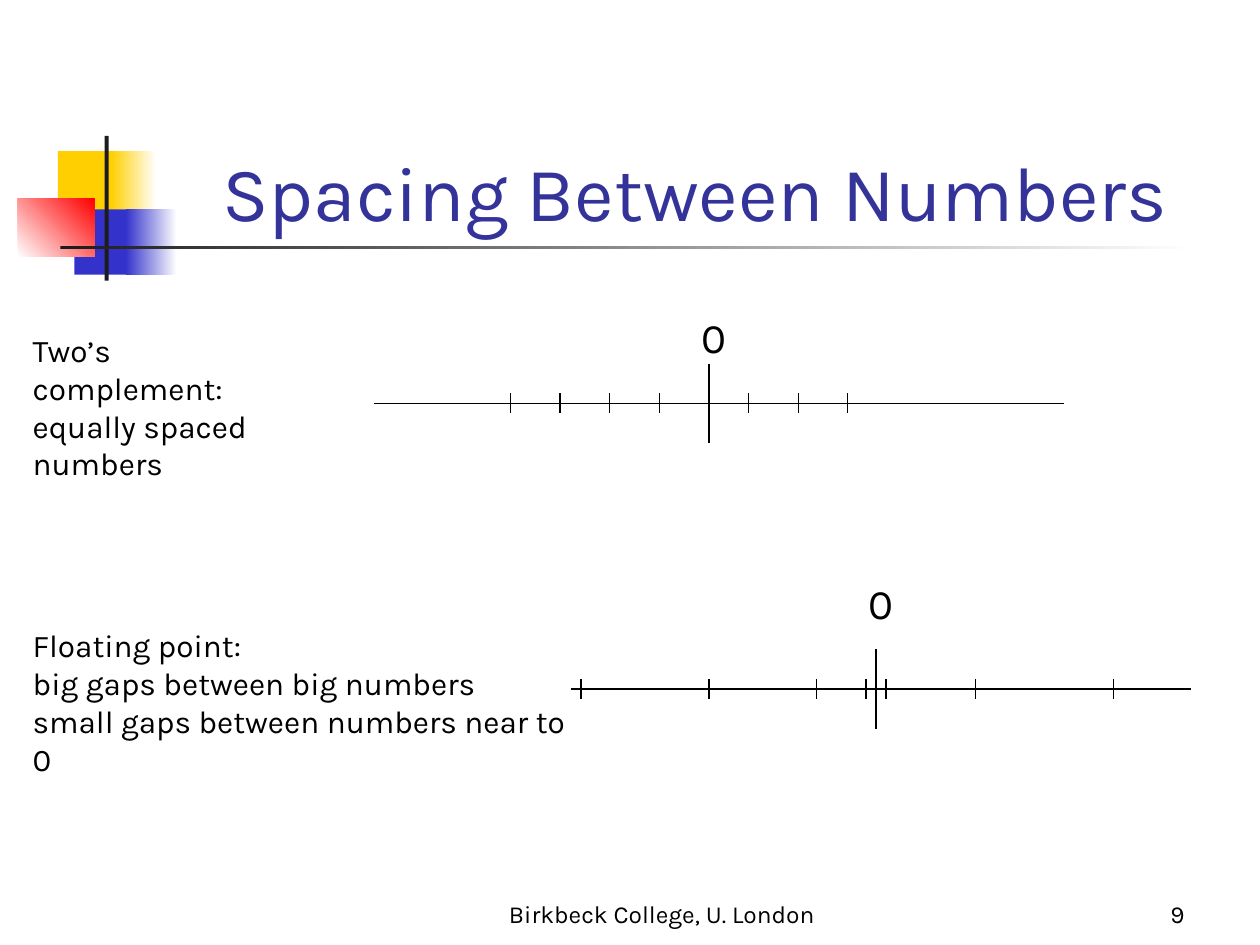
from lxml.etree import SubElement
from pptx import Presentation
from pptx.dml.color import RGBColor
from pptx.enum.shapes import MSO_CONNECTOR as Connector, MSO_SHAPE as Shape
from pptx.enum.text import MSO_ANCHOR as Anchor, PP_ALIGN as Align
from pptx.oxml.ns import qn
from pptx.util import Cm, Pt

BLACK = RGBColor(0x00, 0x00, 0x00)
WHITE = RGBColor(0xFF, 0xFF, 0xFF)
CHARCOAL = RGBColor(0x1C, 0x1C, 0x1C)
YELLOW = RGBColor(0xFF, 0xCF, 0x01)
BLUE = RGBColor(0x33, 0x33, 0xCC)
RED = RGBColor(0xFF, 0x00, 0x00)
NAVY = RGBColor(0x33, 0x33, 0x99)


class SlideBuilder:
    font = "Karla"
    line_width = Pt(0.75)

    def __init__(self, slide):
        self.slide = slide

    def block(self, left, top, width, height, color, fade_to=None, angle=0):
        shape = self.slide.shapes.add_shape(
            Shape.RECTANGLE, Cm(left), Cm(top), Cm(width), Cm(height))
        shape.shadow.inherit = False
        shape.line.fill.background()
        if fade_to is None:
            shape.fill.solid()
            shape.fill.fore_color.rgb = color
        else:
            shape.fill.gradient()
            shape.fill.gradient_angle = angle
            for stop, stop_color in zip(shape.fill.gradient_stops, (color, fade_to)):
                stop.color.rgb = stop_color

    def text(self, left, top, width, height, lines, size,
             color=BLACK, align=Align.LEFT, anchor=Anchor.TOP):
        box = self.slide.shapes.add_textbox(Cm(left), Cm(top), Cm(width), Cm(height))
        frame = box.text_frame
        frame.word_wrap = True
        frame.vertical_anchor = anchor
        for index, line in enumerate(lines):
            paragraph = frame.add_paragraph() if index else frame.paragraphs[0]
            paragraph.alignment = align
            run = paragraph.add_run()
            run.text = line
            run.font.name = self.font
            run.font.size = Pt(size)
            run.font.color.rgb = color

    def line(self, x1, y1, x2, y2):
        connector = self.slide.shapes.add_connector(
            Connector.STRAIGHT, Cm(x1), Cm(y1), Cm(x2), Cm(y2))
        connector.line.color.rgb = BLACK
        connector.line.width = self.line_width
        SubElement(connector.element.spPr, qn("a:effectLst"))

    def number_line(self, start, end, y, zero, offsets, label_top):
        self.line(start, y, end, y)
        self.line(zero, y - 0.8, zero, y + 0.8)
        for offset in offsets:
            self.line(zero + offset, y - 0.2, zero + offset, y + 0.2)
        self.text(zero - 0.4, label_top, 0.99, 1.3, ["0"], 24)


def main():
    presentation = Presentation()
    presentation.slide_width, presentation.slide_height = Cm(25.4), Cm(19.05)
    builder = SlideBuilder(presentation.slides.add_slide(presentation.slide_layouts[6]))

    # Corner ornament and rule under the title
    builder.block(1.17, 3.05, 1.22, 1.32, YELLOW)
    builder.block(2.24, 3.05, 0.91, 1.32, YELLOW, WHITE)
    builder.block(1.5, 4.22, 1.17, 1.32, BLUE)
    builder.block(2.54, 4.22, 1.02, 1.32, BLUE, WHITE)
    builder.block(0.36, 4.01, 1.55, 1.17, WHITE, RED, angle=45)
    builder.block(2.11, 2.74, 0.08, 2.92, CHARCOAL)
    builder.block(1.22, 4.95, 22.86, 0.08, CHARCOAL, WHITE)

    # Title and footer
    builder.text(3.2, 1.73, 21.64, 3.18, ["Spacing Between Numbers"], 44,
                 NAVY, Align.CENTER, Anchor.BOTTOM)
    builder.text(9.32, 17.58, 8.05, 1.27, ["Birkbeck College, U. London"], 14,
                 align=Align.CENTER, anchor=Anchor.BOTTOM)
    builder.text(18.85, 17.58, 5.28, 1.27, ["9"], 14,
                 align=Align.RIGHT, anchor=Anchor.BOTTOM)

    # Two's complement: ticks one step apart
    builder.text(0.41, 6.55, 5.94, 2.57,
                 ["Two’s complement:", "equally spaced", "numbers"], 18)
    even_offsets = [-step for step in range(1, 5)] + [0.8 + step for step in range(3)]
    builder.number_line(7.54, 21.44, 8.13, 14.29, even_offsets, label_top=6.15)

    # Floating point: gaps grow away from zero
    builder.text(0.41, 12.5, 11.76, 2.57,
                 ["Floating point:", "big gaps between big numbers",
                  "small gaps between numbers near to 0"], 18)
    growing_offsets = [-5.95, -3.37, -1.2, -0.2, 0.2, 2, 4.78]
    builder.number_line(11.51, 24, 13.89, 17.66, growing_offsets, label_top=11.51)

    presentation.save("out.pptx")


if __name__ == "__main__":
    main()
